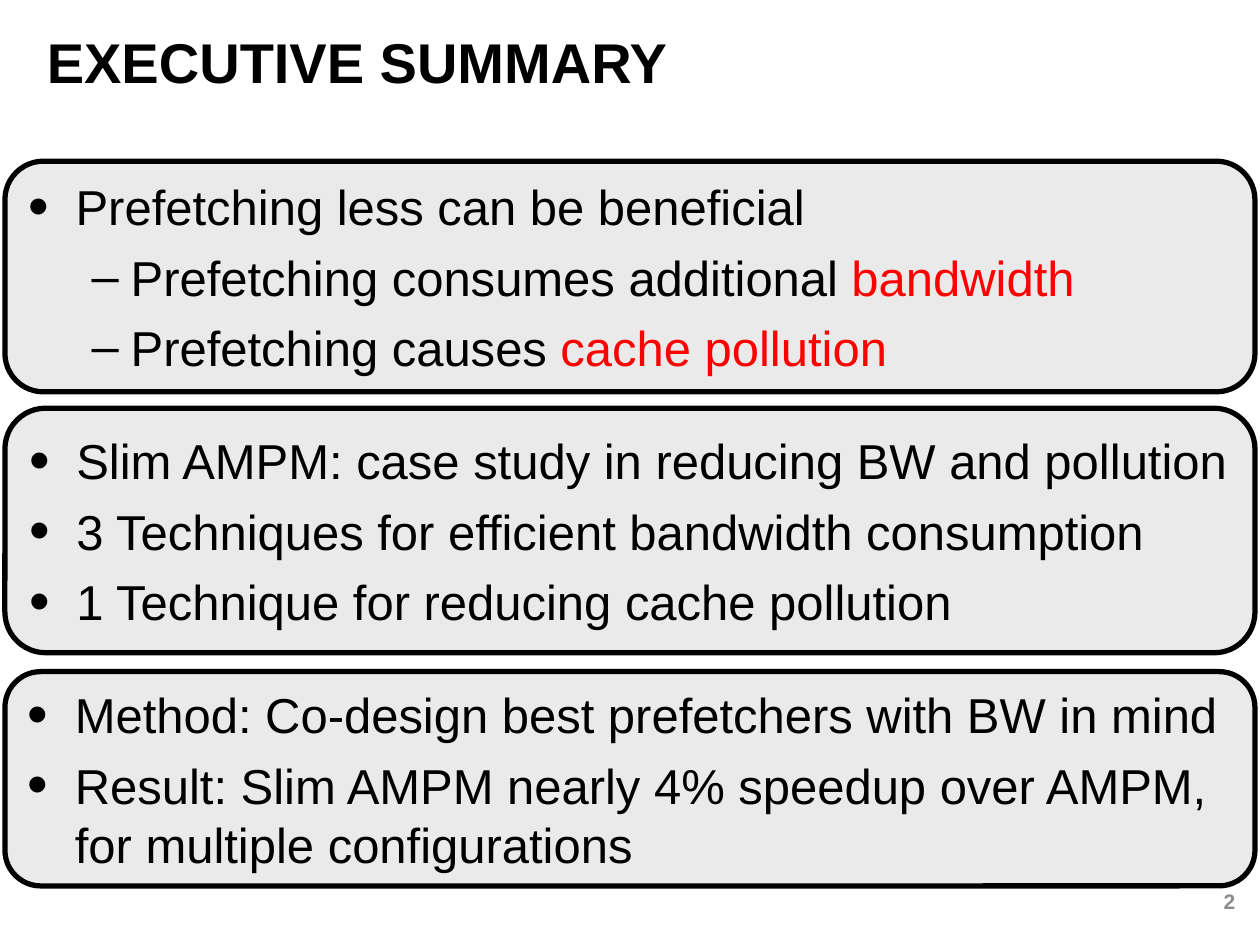
from dataclasses import dataclass

from lxml.etree import SubElement
from pptx import Presentation
from pptx.dml.color import RGBColor
from pptx.enum.shapes import MSO_SHAPE
from pptx.enum.text import MSO_ANCHOR, PP_ALIGN
from pptx.oxml.ns import qn
from pptx.util import Cm, Pt


@dataclass(frozen=True)
class Theme:
    """Colours, font and type sizes of the slide."""
    font: str = "Arial"
    ink: RGBColor = RGBColor(0, 0, 0)
    accent: RGBColor = RGBColor(255, 0, 0)
    muted: RGBColor = RGBColor(140, 140, 140)
    panel: RGBColor = RGBColor(234, 234, 234)
    title: Pt = Pt(32)
    body: Pt = Pt(28)
    number: Pt = Pt(12)


THEME = Theme()
BULLETS = (("•", 120, Cm(0.95), Cm(-0.95)), ("–", 100, Cm(2.06), Cm(-0.79)))
PANELS = (
    (3.25, 4.65, (
        (0, "Prefetching less can be beneficial", ""),
        (1, "Prefetching consumes additional ", "bandwidth"),
        (1, "Prefetching causes ", "cache pollution"),
    )),
    (8.23, 4.93, (
        (0, "Slim AMPM: case study in reducing BW and pollution", ""),
        (0, "3 Techniques for efficient bandwidth consumption", ""),
        (0, "1 Technique for reducing cache pollution", ""),
    )),
    (13.54, 4.32, (
        (0, "Method: Co-design best prefetchers with BW in mind", ""),
        (0, "Result: Slim AMPM nearly 4% speedup over AMPM, for multiple configurations", ""),
    )),
)


def style(r, size, color, bold=False):
    """Format a run with the theme font."""
    r.font.name = THEME.font
    r.font.size = size
    r.font.color.rgb = color
    r.font.bold = bold


def add_bullet(p, level):
    """Give a paragraph the bullet and hanging indent of its level."""
    char, percent, margin, indent = BULLETS[level]
    p.level = level
    pPr = p._p.get_or_add_pPr()
    pPr.set("marL", str(margin))
    pPr.set("indent", str(indent))
    SubElement(pPr, qn("a:buSzPct"), val=str(percent * 1000))
    SubElement(pPr, qn("a:buFont"), typeface=THEME.font)
    SubElement(pPr, qn("a:buChar"), char=char)


def add_panel(s, top, height, items):
    """Add a rounded panel holding a bulleted list."""
    sp = s.shapes.add_shape(MSO_SHAPE.ROUNDED_RECTANGLE, Cm(0.1), Cm(top), Cm(25.2), Cm(height))
    sp.shadow.inherit = False
    sp.fill.solid()
    sp.fill.fore_color.rgb = THEME.panel
    sp.line.color.rgb = THEME.ink
    sp.line.width = Pt(3)
    tf = sp.text_frame
    tf.word_wrap = True
    tf.vertical_anchor = MSO_ANCHOR.MIDDLE
    for i, (level, text, highlight) in enumerate(items):
        p = tf.paragraphs[0] if i == 0 else tf.add_paragraph()
        add_bullet(p, level)
        p.alignment = PP_ALIGN.LEFT
        p.space_before = Pt(6.7 if i else 0)
        for part, color in ((text, THEME.ink), (highlight, THEME.accent)):
            if part:
                r = p.add_run()
                r.text = part
                style(r, THEME.body, color)


def set_line(sp, text, size, color, align):
    """Write one bold, vertically centred line into a shape."""
    tf = sp.text_frame
    tf.text = text
    tf.word_wrap = True
    tf.vertical_anchor = MSO_ANCHOR.MIDDLE
    p = tf.paragraphs[0]
    p.alignment = align
    style(p.runs[0], size, color, bold=True)


def add_title(s, text):
    """Place and fill the title placeholder."""
    sp = s.shapes.title
    sp.left, sp.top, sp.width, sp.height = Cm(0.69), Cm(0.56), Cm(23.29), Cm(1.35)
    set_line(sp, text, THEME.title, THEME.ink, PP_ALIGN.LEFT)


def add_number(s, text):
    """Add the slide number at the lower right."""
    sp = s.shapes.add_textbox(Cm(19.23), Cm(17.65), Cm(5.92), Cm(1.02))
    set_line(sp, text, THEME.number, THEME.muted, PP_ALIGN.RIGHT)


def main():
    """Build and save the slide."""
    prs = Presentation()
    prs.slide_width, prs.slide_height = Cm(25.4), Cm(19.05)
    s = prs.slides.add_slide(prs.slide_layouts[5])
    add_title(s, "EXECUTIVE SUMMARY")
    for panel in PANELS:
        add_panel(s, *panel)
    add_number(s, "2")
    prs.save("out.pptx")


if __name__ == "__main__":
    main()
